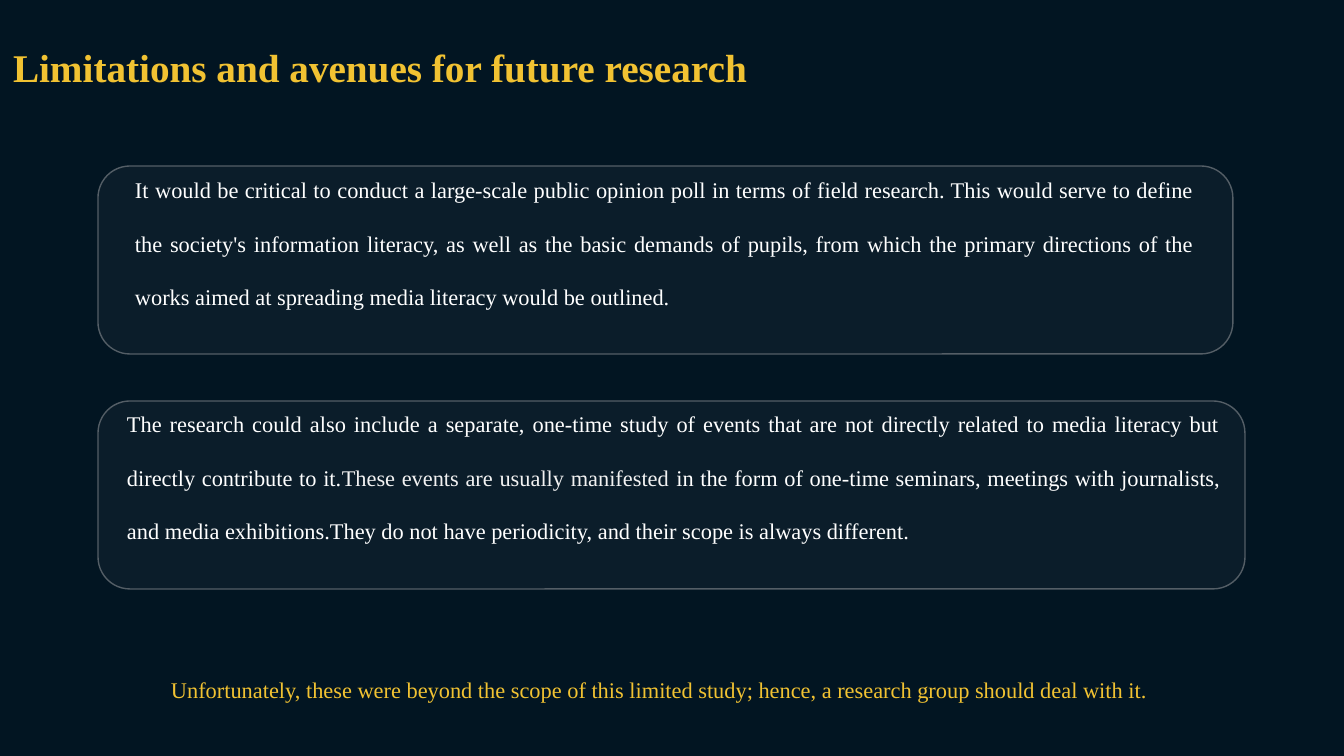
from lxml.etree import SubElement
from pptx import Presentation
from pptx.dml.color import RGBColor
from pptx.enum.shapes import MSO_SHAPE
from pptx.enum.text import MSO_ANCHOR, MSO_AUTO_SIZE, PP_ALIGN
from pptx.oxml.ns import qn
from pptx.util import Emu, Pt

NAVY = RGBColor(0x02, 0x15, 0x22)
PALE = RGBColor(0xF0, 0xF3, 0xF4)
GREY = RGBColor(0x54, 0x5E, 0x66)
GOLD = RGBColor(0xF1, 0xC2, 0x32)
WHITE = RGBColor(0xFF, 0xFF, 0xFF)
OFF_WHITE = RGBColor(0xF2, 0xF2, 0xF2)
FONT = "Times New Roman"
WIDTH, HEIGHT = 1344, 756


def px(*lengths):
    """Turn pixel lengths into EMU; the slide is 10 inches wide."""
    return [Emu(round(length * 9144000 / WIDTH)) for length in lengths]


def write(box, spans, size, align, bold=False):
    """Fill a box with one double-spaced paragraph of (text, colour) spans."""
    frame = box.text_frame
    frame.word_wrap = True
    frame.auto_size = MSO_AUTO_SIZE.SHAPE_TO_FIT_TEXT
    frame.vertical_anchor = MSO_ANCHOR.TOP
    frame.margin_left, frame.margin_top, frame.margin_right, frame.margin_bottom = px(13, 13, 13, 13)
    para = frame.paragraphs[0]
    para.alignment = align
    para.line_spacing = 2.0
    para.space_before, para.space_after = Pt(0), Pt(12)
    for text, colour in spans:
        span = para.add_run()
        span.text = text
        span.font.name = FONT
        span.font.size = Pt(size)
        span.font.bold = bold
        span.font.color.rgb = colour


deck = Presentation()
deck.slide_width, deck.slide_height = px(WIDTH, HEIGHT)
page = deck.slides.add_slide(deck.slide_layouts[5])
page.background.fill.solid()
page.background.fill.fore_color.rgb = NAVY

# Translucent panels behind the two suggestions
for top, width in ((401, 1147), (166, 1135)):
    panel = page.shapes.add_shape(MSO_SHAPE.ROUNDED_RECTANGLE, *px(98, top, width, 188))
    panel.adjustments[0] = 0.17
    panel.shadow.inherit = False
    panel.fill.solid()
    panel.fill.fore_color.rgb = PALE
    colour = panel.fill._xPr.find(qn("a:solidFill"))[0]
    SubElement(colour, qn("a:alpha"), val="4000")
    panel.line.color.rgb = GREY
    panel.line.width = Pt(0.75)

title = page.shapes.title
title.left, title.top, title.width, title.height = px(0, -17, 841, 75)
write(title, [("Limitations and avenues for future research", GOLD)], 21, PP_ALIGN.LEFT, bold=True)

passages = [
    ((122, 136, 1086, 163), [
        ("It would be critical to conduct a large-scale public opinion poll in terms of field "
         "research. This would serve to define the society's information literacy, as well as the "
         "basic demands of pupils, from which the primary directions of the works aimed at "
         "spreading media literacy would be outlined.", WHITE)]),
    ((158, 636, 1013, 54), [
        ("Unfortunately, these were beyond the scope of this limited study; hence, a research "
         "group should deal with it.", GOLD)]),
    ((114, 370, 1120, 163), [
        ("The research could also include a separate, one-time study of events that are not "
         "directly related to media literacy but directly contribute to it.", WHITE),
        ("These events are usually manifested ", OFF_WHITE),
        ("in the form of one-time seminars, meetings with journalists, and media exhibitions."
         "They do not have periodicity, and their scope is always different.", WHITE)]),
]
for place, spans in passages:
    write(page.shapes.add_textbox(*px(*place)), spans, 12, PP_ALIGN.JUSTIFY)

deck.save("out.pptx")
